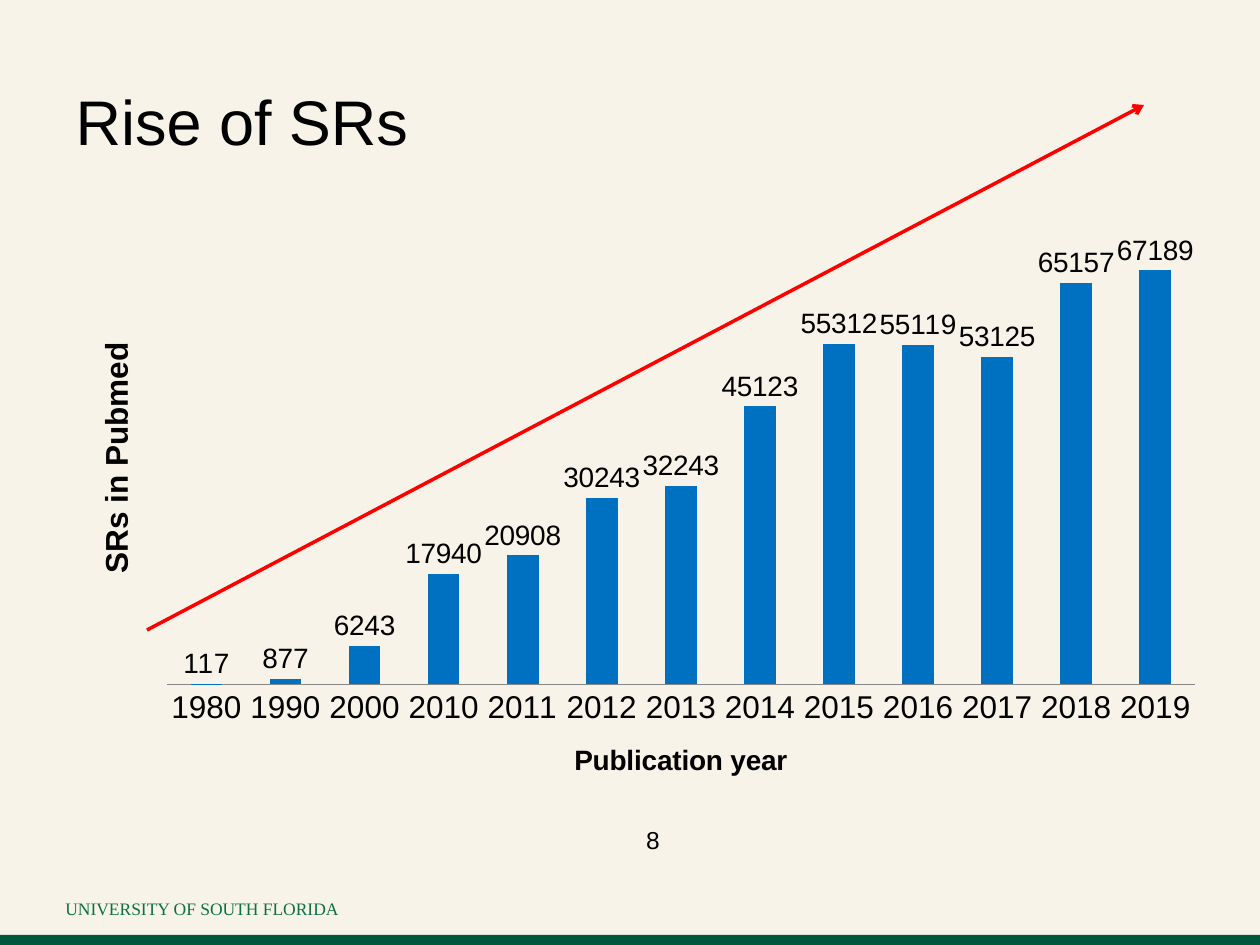
from lxml.etree import SubElement
from pptx import Presentation
from pptx.chart.data import CategoryChartData
from pptx.dml.color import RGBColor
from pptx.enum.chart import XL_CHART_TYPE, XL_LABEL_POSITION, XL_TICK_MARK
from pptx.enum.shapes import MSO_CONNECTOR, MSO_SHAPE
from pptx.enum.text import MSO_ANCHOR, PP_ALIGN
from pptx.oxml import parse_xml
from pptx.oxml.ns import nsdecls, qn
from pptx.util import Pt

EMU_PER_PX = 914400 / 126
COLORS = {
    "background": "F7F3E9",
    "band": "00573C",
    "footer": "0D7144",
    "text": "000000",
    "bar": "0070C0",
    "axis": "878787",
    "trend": "FF0000",
}
PUBLICATIONS = {
    "1980": 117, "1990": 877, "2000": 6243, "2010": 17940, "2011": 20908,
    "2012": 30243, "2013": 32243, "2014": 45123, "2015": 55312, "2016": 55119,
    "2017": 53125, "2018": 65157, "2019": 67189,
}
PLOT_LAYOUT = {
    "layoutTarget": "inner", "xMode": "edge", "yMode": "edge",
    "x": "0.09", "y": "0.02", "w": "0.89", "h": "0.79",
}


def px(*lengths):
    """Turn pixel lengths into EMU."""
    return [round(length * EMU_PER_PX) for length in lengths]


def color(name):
    """Look up a named colour."""
    return RGBColor.from_string(COLORS[name])


class SlideBuilder:
    """Holds the style and the current slide."""

    def __init__(self, deck):
        """Add a title-only slide with the background colour."""
        self.slide = deck.slides.add_slide(deck.slide_layouts[5])
        self.shapes = self.slide.shapes
        fill = self.slide.background.fill
        fill.solid()
        fill.fore_color.rgb = color("background")

    def style(self, font, size, tone="text", name="Arial", bold=False):
        """Apply format values to a font."""
        values = {"size": Pt(size), "name": name, "bold": bold}
        for key, value in values.items():
            setattr(font, key, value)
        font.color.rgb = color(tone)

    def set_text(self, box, text, size, align=PP_ALIGN.LEFT, anchor=MSO_ANCHOR.TOP, **font):
        """Put one styled paragraph into a box."""
        frame = box.text_frame
        frame.word_wrap = True
        frame.vertical_anchor = anchor
        para = frame.paragraphs[0]
        para.alignment = align
        span = para.add_run()
        span.text = text
        self.style(span.font, size, **font)

    def title(self, bounds, text, size):
        """Move and fill the title placeholder."""
        box = self.shapes.title
        for key, value in zip(("left", "top", "width", "height"), px(*bounds)):
            setattr(box, key, value)
        self.set_text(box, text, size, anchor=MSO_ANCHOR.MIDDLE)

    def text(self, bounds, text, size, **options):
        """Add a text box."""
        self.set_text(self.shapes.add_textbox(*px(*bounds)), text, size, **options)

    def band(self, bounds, tone):
        """Add a plain filled rectangle."""
        box = self.shapes.add_shape(MSO_SHAPE.RECTANGLE, *px(*bounds))
        box.shadow.inherit = False
        box.fill.solid()
        box.fill.fore_color.rgb = color(tone)
        box.line.fill.background()

    def arrow(self, ends, tone, width):
        """Add a straight arrow."""
        connector = self.shapes.add_connector(MSO_CONNECTOR.STRAIGHT, *px(*ends))
        connector.line.color.rgb = color(tone)
        connector.line.width = Pt(width)
        properties = connector._element.spPr
        SubElement(properties.find(qn("a:ln")), qn("a:tailEnd")).set("type", "arrow")
        SubElement(properties, qn("a:effectLst"))

    def axis_title(self, axis, text, size):
        """Give an axis a bold title."""
        frame = axis.axis_title.text_frame
        frame.text = text
        self.style(frame.paragraphs[0].runs[0].font, size, bold=True)

    def column_chart(self, bounds, name, values):
        """Add the column chart with labels and axis titles."""
        data = CategoryChartData()
        data.categories = list(values)
        data.add_series(name, list(values.values()))
        chart = self.shapes.add_chart(
            XL_CHART_TYPE.COLUMN_CLUSTERED, *px(*bounds), data).chart
        chart.has_legend = False
        chart.has_title = False
        self.style(chart.font, 10)

        plot = chart.plots[0]
        plot.vary_by_categories = False
        plot.gap_width = 150
        fill = plot.series[0].format.fill
        fill.solid()
        fill.fore_color.rgb = color("bar")
        plot.has_data_labels = True
        labels = plot.data_labels
        labels.show_value = True
        labels.position = XL_LABEL_POSITION.OUTSIDE_END
        self.style(labels.font, 16)

        years, counts = chart.category_axis, chart.value_axis
        years.major_tick_mark = XL_TICK_MARK.NONE
        years.format.line.color.rgb = color("axis")
        self.style(years.tick_labels.font, 18)
        self.axis_title(years, "Publication year", 16)
        axis_values = {"minimum_scale": 0, "maximum_scale": 80000,
                       "has_major_gridlines": False, "visible": False}
        for key, value in axis_values.items():
            setattr(counts, key, value)
        self.axis_title(counts, "SRs in Pubmed", 18)

        area = chart._chartSpace.chart.plotArea
        for old in area.findall(qn("c:layout")):
            area.remove(old)
        layout = parse_xml(f'<c:layout {nsdecls("c")}><c:manualLayout/></c:layout>')
        for key, value in PLOT_LAYOUT.items():
            SubElement(layout[0], qn(f"c:{key}")).set("val", value)
        area.insert(0, layout)


def main():
    """Build and save the slide."""
    deck = Presentation()
    deck.slide_width, deck.slide_height = px(1260, 945)
    page = SlideBuilder(deck)
    page.band((0, 935, 1260, 10), "band")
    page.text((53, 892, 399, 34), "UNIVERSITY OF SOUTH FLORIDA", 10,
              tone="footer", name="Times New Roman")
    page.title((63, 73, 1155, 95), "Rise of SRs", 36)
    page.text((378, 819, 294, 66), "8", 14, align=PP_ALIGN.RIGHT)
    page.column_chart((63, 179, 1155, 624), "Series 1", PUBLICATIONS)
    page.arrow((147, 630, 1144, 105), "trend", 2)
    deck.save("out.pptx")


if __name__ == "__main__":
    main()
